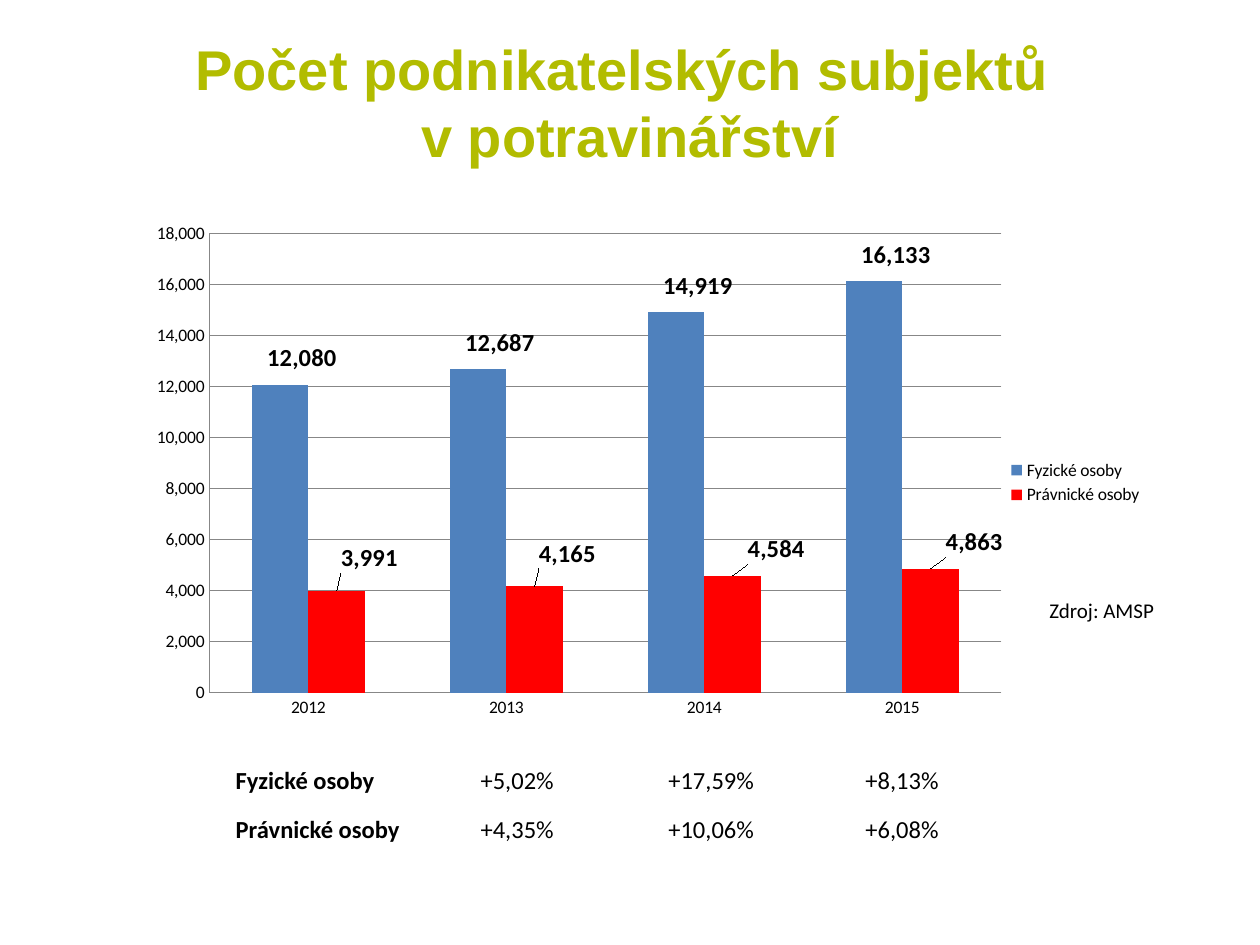
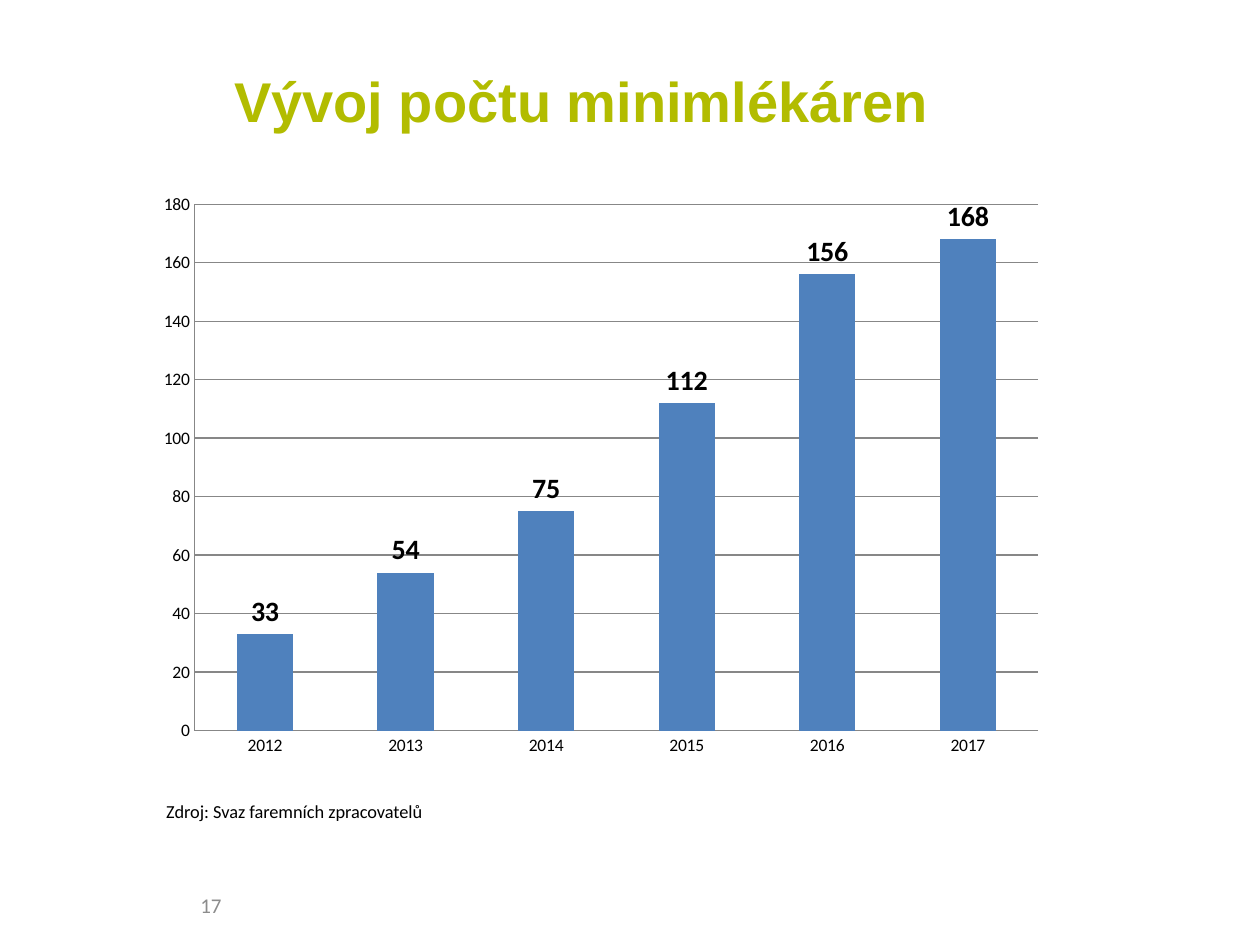
from itertools import chain

from lxml.etree import SubElement
from pptx import Presentation
from pptx.chart.data import CategoryChartData
from pptx.dml.color import RGBColor
from pptx.enum.chart import XL_CHART_TYPE, XL_LABEL_POSITION, XL_LEGEND_POSITION, XL_TICK_MARK
from pptx.enum.text import MSO_ANCHOR, PP_ALIGN
from pptx.oxml.ns import qn
from pptx.util import Inches, Pt

LIME = RGBColor(0xB2, 0xBC, 0x00)
BLACK = RGBColor(0x00, 0x00, 0x00)
GREY = RGBColor(0x8C, 0x8C, 0x8C)
GRID_GREY = RGBColor(0x87, 0x87, 0x87)
BLUE = RGBColor(0x4F, 0x81, 0xBD)
RED = RGBColor(0xFF, 0x00, 0x00)
HEADING_FONT, BODY_FONT = "Arial", "Calibri"


def style_font(font, size, color=BLACK, bold=False, name=BODY_FONT):
    """Apply size, colour, weight and typeface to a font."""
    font.size, font.bold, font.name = Pt(size), bold, name
    font.color.rgb = color


def write_text(frame, text, align=PP_ALIGN.LEFT, anchor=MSO_ANCHOR.TOP, **style):
    """Write one paragraph, breaking it at each newline."""
    frame.word_wrap = True
    frame.vertical_anchor = anchor
    paragraph = frame.paragraphs[0]
    paragraph.alignment = align
    for number, line in enumerate(text.split("\n")):
        if number:
            paragraph.add_line_break()
        run = paragraph.add_run()
        run.text = line
        style_font(run.font, **style)


def add_text(slide, box, text, **style):
    """Add a text box in a box given in inches."""
    frame = slide.shapes.add_textbox(*map(Inches, box)).text_frame
    write_text(frame, text, **style)


def add_title(slide, box, text):
    """Add the shared lime heading."""
    add_text(slide, box, text, align=PP_ALIGN.CENTER, anchor=MSO_ANCHOR.MIDDLE,
             size=32, color=LIME, bold=True, name=HEADING_FONT)


def add_layout(parent, index, **settings):
    """Insert a manual chart layout at an index of its parent."""
    for previous in parent.findall(qn("c:layout")):
        parent.remove(previous)
    layout = parent.makeelement(qn("c:layout"))
    parent.insert(index, layout)
    manual = SubElement(layout, qn("c:manualLayout"))
    for tag, value in settings.items():
        SubElement(manual, qn(f"c:{tag}")).set("val", str(value))


def style_axes(chart, maximum, step, number_format):
    """Format both axes and the gridlines."""
    values = chart.value_axis
    values.minimum_scale, values.maximum_scale, values.major_unit = 0, maximum, step
    values.tick_labels.number_format = number_format
    values.tick_labels.number_format_is_linked = False
    values.major_gridlines.format.line.color.rgb = GRID_GREY
    values.major_gridlines.format.line.width = Pt(0.75)
    for axis in (values, chart.category_axis):
        axis.major_tick_mark = axis.minor_tick_mark = XL_TICK_MARK.NONE
        axis.format.line.color.rgb = GRID_GREY
        axis.format.line.width = Pt(0.75)


def add_columns(slide, box, years, series, plot_box, maximum, step, label_size,
                number_format="0"):
    """Add a clustered column chart; series holds name, values and colour."""
    data = CategoryChartData(number_format=number_format)
    data.categories = years
    for name, values, _ in series:
        data.add_series(name, values)
    chart = slide.shapes.add_chart(
        XL_CHART_TYPE.COLUMN_CLUSTERED, *map(Inches, box), data).chart
    style_font(chart.font, 10)
    chart.has_title = chart.has_legend = False
    style_axes(chart, maximum, step, number_format)
    plot = chart.plots[0]
    plot.gap_width, plot.overlap, plot.vary_by_categories = 150, 0, False
    for columns, (_, _, color) in zip(plot.series, series):
        columns.format.fill.solid()
        columns.format.fill.fore_color.rgb = color
        labels = columns.data_labels
        labels.show_value = True
        labels.position = XL_LABEL_POSITION.OUTSIDE_END
        style_font(labels.font, label_size, bold=True)
    area = chart.element.find(f".//{qn('c:plotArea')}")
    x, y, w, h = plot_box
    add_layout(area, 0, layoutTarget="inner", xMode="edge", yMode="edge", x=x, y=y, w=w, h=h)
    return chart


def shift_labels(chart, size, offsets):
    """Move the value labels of each series by fractions of the chart."""
    for columns, series_offsets in zip(chart.plots[0].series, offsets):
        for index in range(len(series_offsets)):
            label = columns.points[index].data_label
            style_font(label.font, size, bold=True)
            label.position = XL_LABEL_POSITION.OUTSIDE_END
    labels = chart.element.iter(qn("c:dLbl"))
    for label, (x, y) in zip(list(labels), chain(*offsets)):
        add_layout(label, 1, x=x, y=y)


def add_growth_table(slide, box, rows, widths, heights):
    """Add the unfilled table of yearly growth."""
    table = slide.shapes.add_table(len(rows), len(widths), *map(Inches, box)).table
    table.first_row = table.horz_banding = False
    for column, width in zip(table.columns, widths):
        column.width = Inches(width)
    for table_row, height, texts in zip(table.rows, heights, rows):
        table_row.height = Inches(height)
        for number, (cell, text) in enumerate(zip(table_row.cells, texts)):
            cell.fill.background()
            align = PP_ALIGN.CENTER if number else PP_ALIGN.LEFT
            write_text(cell.text_frame, text, align=align, size=14, bold=number == 0)


def build_businesses(slide):
    """Build the slide on food businesses."""
    add_text(slide, (8.23, 4.69, 1.34, 0.3), "Zdroj: AMSP", size=12)
    add_title(slide, (0.5, 0.3, 9, 1.01),
              "Počet podnikatelských subjektů \nv potravinářství")
    people, companies = "Fyzické osoby", "Právnické osoby"
    chart = add_columns(
        slide, (0.5, 1.31, 8.67, 5.04), ("2012", "2013", "2014", "2015"),
        ((people, (12080, 12687, 14919, 16133), BLUE),
         (companies, (3991, 4165, 4584, 4863), RED)),
        (0.134, 0.108, 0.725, 0.723), 18000, 2000, 14, "#,##0")
    chart.has_legend = True
    chart.legend.position = XL_LEGEND_POSITION.RIGHT
    chart.legend.include_in_layout = False
    style_font(chart.legend.font, 10)
    shift_labels(chart, 14, (
        [(0.02, -0.01)] * 4,
        [(0.03, -0.02)] * 2 + [(0.04, -0.01)] * 2))
    add_growth_table(
        slide, (1.77, 6.03, 6.06, 0.73),
        ((people, "+5,02%", "+17,59%", "+8,13%"),
         (companies, "+4,35%", "+10,06%", "+6,08%")),
        (1.64, 1.39, 1.69, 1.34), (0.39, 0.34))


def build_dairies(slide):
    """Build the slide on small dairies."""
    add_title(slide, (0.67, 0.29, 7.89, 1.01), "Vývoj počtu minimlékáren")
    add_text(slide, (0.51, 6.98, 2.33, 0.4), "17", align=PP_ALIGN.CENTER,
             anchor=MSO_ANCHOR.MIDDLE, size=12, color=GREY)
    add_columns(
        slide, (0.91, 1.15, 7.95, 5.12), [str(year) for year in range(2012, 2018)],
        (("Series 1", (33, 54, 75, 112, 156, 168), BLUE),),
        (0.08, 0.092, 0.842, 0.816), 180, 20, 16)
    add_text(slide, (1.22, 6.3, 2.68, 0.29), "Zdroj: Svaz faremních zpracovatelů", size=10.5)


def main():
    """Build and save the presentation."""
    deck = Presentation()
    deck.slide_width, deck.slide_height = Inches(10), Inches(7.5)
    for build in (build_businesses, build_dairies):
        build(deck.slides.add_slide(deck.slide_layouts[6]))
    deck.save("out.pptx")


if __name__ == "__main__":
    main()
